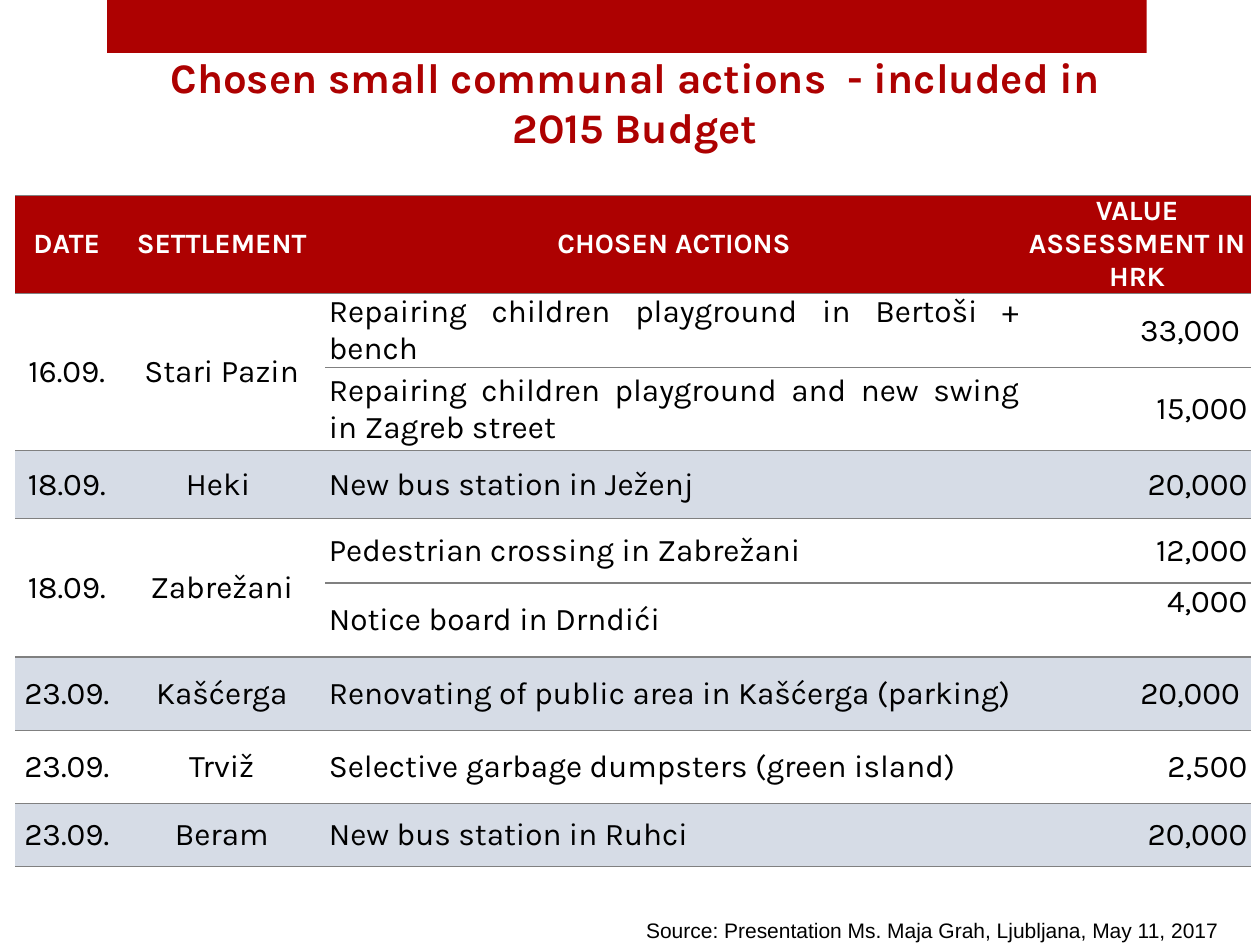
from lxml import etree
from pptx import Presentation
from pptx import util as u
from pptx.dml.color import RGBColor
from pptx.enum import shapes, text
from pptx.oxml.ns import qn

RED, WHITE, BLACK, BAND, RULE = "AD0101", "FFFFFF", "000000", "D6DCE6", "808080"
NBSP = chr(160)
LEFT, CENTER, RIGHT, JUSTIFY = (text.PP_ALIGN.LEFT, text.PP_ALIGN.CENTER,
                                text.PP_ALIGN.RIGHT, text.PP_ALIGN.JUSTIFY)

HEADER = ["DATE", "SETTLEMENT", "CHOSEN ACTIONS", "VALUE ASSESSMENT IN HRK"]
# One entry per settlement: date, name, [(action, value), ...]
SETTLEMENTS = [
    ("16.09.", "Stari Pazin", [
        ("Repairing children playground in Bertoši + bench", "33,000" + NBSP),
        ("Repairing children playground and new swing in Zagreb street", "15,000")]),
    ("18.09.", "Heki" + NBSP, [("New bus station in Ježenj", "20,000")]),
    ("18.09.", "Zabrežani", [
        ("Pedestrian crossing in Zabrežani", "12,000"),
        ("Notice board in Drndići", "4,000")]),
    ("23.09.", "Kašćerga", [
        ("Renovating of public area in Kašćerga (parking)", "20,000" + NBSP)]),
    ("23.09.", "Trviž", [("Selective garbage dumpsters (green island)", "2,500")]),
    ("23.09.", "Beram", [("New bus station in Ruhci", "20,000")]),
]
COLUMNS = [0.82, 1.64, 5.54, 1.81]
ROWS = [0.72, 0.52, 0.66, 0.54, 0.51, 0.59, 0.58, 0.58, 0.5]


def rgb(value):
    return RGBColor.from_string(value)


class Deck:
    """Holds the style and the current slide; places are in inches."""

    def __init__(self, width, height, font):
        self.prs = Presentation()
        self.prs.slide_width, self.prs.slide_height = u.Inches(width), u.Inches(height)
        self.font = font
        self.s = self.prs.slides.add_slide(self.prs.slide_layouts[6])

    def bar(self, place, color):
        sp = self.s.shapes.add_shape(shapes.MSO_SHAPE.RECTANGLE, *map(u.Inches, place))
        sp.shadow.inherit = False
        sp.fill.solid()
        sp.fill.fore_color.rgb = rgb(color)
        sp.line.fill.background()

    def set_text(self, p, words, size, color, align, bold=False, font=None):
        p.text, p.alignment = words, align
        p.font.name, p.font.size, p.font.bold = font or self.font, u.Pt(size), bold
        p.font.color.rgb = rgb(color)

    def label(self, place, words, size, color, align, **style):
        tf = self.s.shapes.add_textbox(*map(u.Inches, place)).text_frame
        tf.word_wrap = True
        self.set_text(tf.paragraphs[0], words, size, color, align, **style)

    def table(self, left, top, columns, rows):
        frame = self.s.shapes.add_table(len(rows), len(columns), *map(
            u.Inches, (left, top, sum(columns), sum(rows))))
        table = frame.table
        table.horz_banding = False
        for col, width in zip(table.columns, columns):
            col.width = u.Inches(width)
        for row, height in zip(table.rows, rows):
            row.height = u.Inches(height)
        return table

    def cell(self, cell, words, size, color, align, fill, bold=False):
        cell.margin_left = cell.margin_right = u.Inches(0.03)
        cell.margin_top = cell.margin_bottom = 0
        cell.vertical_anchor = text.MSO_ANCHOR.MIDDLE
        cell.fill.solid()
        cell.fill.fore_color.rgb = rgb(fill)
        self.rules(cell)
        self.set_text(cell.text_frame.paragraphs[0], words, size, color, align, bold)

    def rules(self, cell):
        """Grey lines above and below the cell, none at its sides."""
        props = cell._tc.get_or_add_tcPr()
        for i, side in enumerate(("lnL", "lnR", "lnT", "lnB")):
            ln = etree.Element(qn("a:" + side), w=str(u.Pt(1)))
            if side in ("lnL", "lnR"):
                etree.SubElement(ln, qn("a:noFill"))
            else:
                solid = etree.SubElement(ln, qn("a:solidFill"))
                etree.SubElement(solid, qn("a:srgbClr"), val=RULE)
            props.insert(i, ln)


def main():
    deck = Deck(10, 7.5, "Karla")
    deck.bar((0.85, 0, 8.25, 0.42), RED)

    table = deck.table(0.12, 1.55, COLUMNS, ROWS)
    for c, words in enumerate(HEADER):
        deck.cell(table.cell(0, c), words, 16, WHITE, CENTER, RED, bold=True)
    r = 1
    for i, (date, name, actions) in enumerate(SETTLEMENTS):
        fill = BAND if i % 2 else WHITE
        first = r
        for action, value in actions:
            shown = (date, name) if r == first else ("", "")
            for c, (words, align) in enumerate(zip(
                    (*shown, action, value), (CENTER, CENTER, JUSTIFY, RIGHT))):
                deck.cell(table.cell(r, c), words, 18, BLACK, align, fill)
            r += 1
        if len(actions) > 1:
            for c in (0, 1):
                table.cell(first, c).merge(table.cell(r - 1, c))
    table.cell(5, 3).margin_bottom = u.Inches(0.29)  # this value sits high in its row

    deck.label((1, 0.36, 8.08, 1.55), "Chosen small communal actions  - included in 2015 Budget",
               24, RED, CENTER, bold=True)
    deck.label((5.03, 7.23, 4.9, 0.3),
               "Source: Presentation Ms. Maja Grah, Ljubljana, May 11, 2017",
               12, BLACK, LEFT, font="Arial")
    deck.prs.save("out.pptx")


if __name__ == "__main__":
    main()
